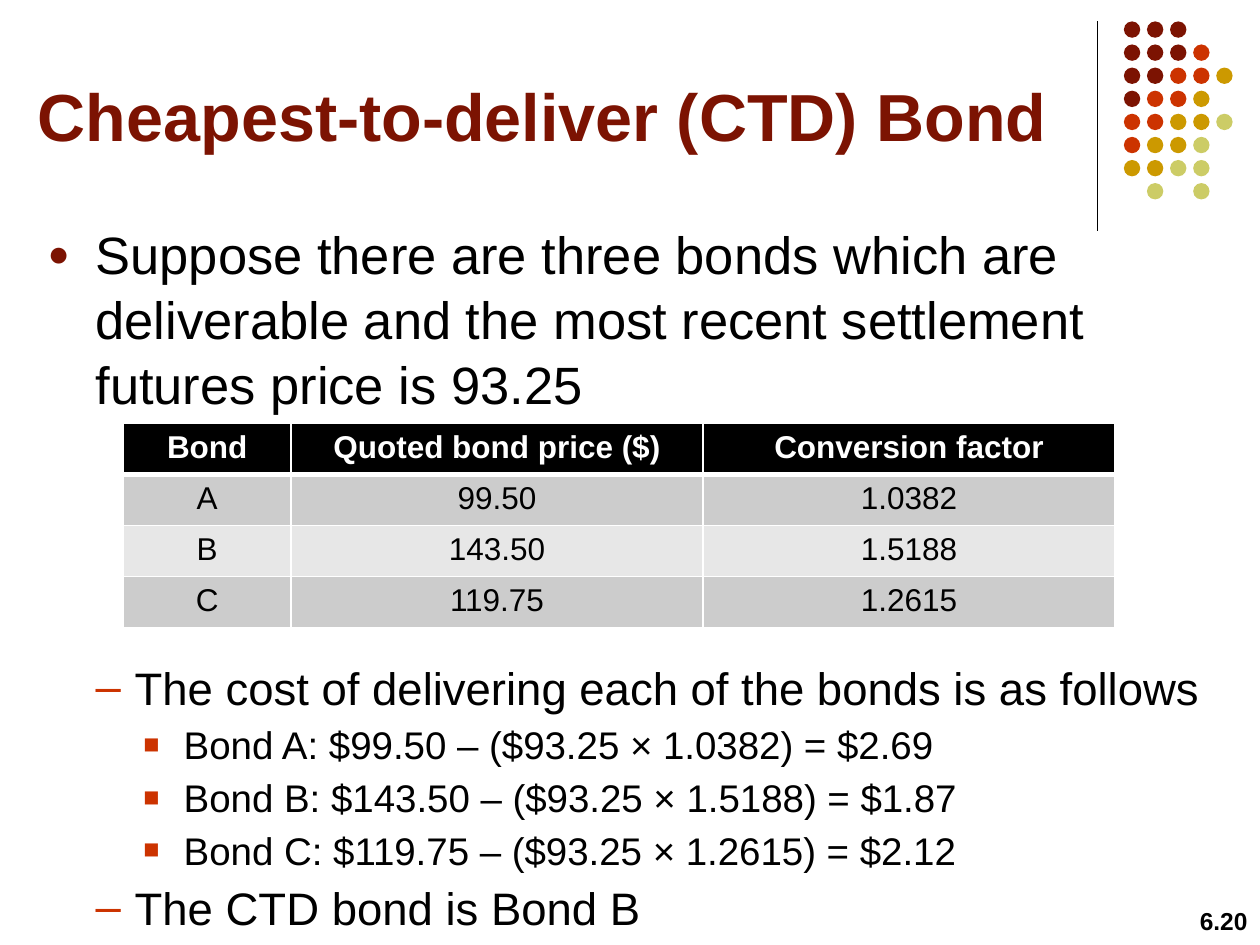
from dataclasses import dataclass

from lxml import etree
from pptx import Presentation
from pptx.dml.color import RGBColor
from pptx.enum.shapes import MSO_CONNECTOR, MSO_SHAPE
from pptx.enum.text import MSO_ANCHOR, MSO_AUTO_SIZE, PP_ALIGN
from pptx.oxml.ns import qn
from pptx.util import Inches, Pt

STRAIGHT = MSO_CONNECTOR.STRAIGHT
OVAL = MSO_SHAPE.OVAL
MIDDLE = MSO_ANCHOR.MIDDLE
NO_FIT = MSO_AUTO_SIZE.NONE
LEFT, CENTER, RIGHT = PP_ALIGN.LEFT, PP_ALIGN.CENTER, PP_ALIGN.RIGHT

BLACK = RGBColor(0x00, 0x00, 0x00)
WHITE = RGBColor(0xFF, 0xFF, 0xFF)
MAROON = RGBColor(0x7C, 0x13, 0x02)
RED = RGBColor(0xCC, 0x33, 0x00)
GOLD = RGBColor(0xCC, 0x99, 0x00)
OLIVE = RGBColor(0xCC, 0xCC, 0x66)
DARK_BAND = RGBColor(0xCC, 0xCC, 0xCC)
LIGHT_BAND = RGBColor(0xE7, 0xE7, 0xE7)

FONT = "Arial"
WIDTH, HEIGHT = 10, 7.5
DOT_LEFT, DOT_TOP, DOT_SIZE, DOT_PITCH = 8.92, 0.17, 0.13, 0.55 / 3
DOT_COLORS = {"m": MAROON, "r": RED, "g": GOLD, "o": OLIVE}
DOT_ROWS = ["mmm", "mmmr", "mmrrg", "mrrg", "rrggo", "rggo", "ggoo", " o o"]

TABLE_LEFT, TABLE_TOP, ROW_HEIGHT = 0.98, 3.36, 0.405
COLUMN_WIDTHS = [1.33, 3.27, 3.27]
BOND_ROWS = [
    ("Bond", "Quoted bond price ($)", "Conversion factor"),
    ("A", "99.50", "1.0382"),
    ("B", "143.50", "1.5188"),
    ("C", "119.75", "1.2615"),
]


@dataclass(frozen=True)
class Level:
    size: int
    indent: float
    hang: float
    bullet: str
    color: RGBColor
    bullet_share: int


@dataclass(frozen=True)
class Point:
    level: Level
    text: str
    before: float = 3


MAIN = Level(30, 0.38, 0.38, "●", MAROON, 70)
DASH = Level(26, 0.69, 0.31, "–", RED, 100)
SQUARE = Level(22, 1.08, 0.32, "■", RED, 70)

POINTS = [
    Point(MAIN, "Suppose there are three bonds which are deliverable and the "
                "most recent settlement futures price is 93.25", 0),
    Point(DASH, "The cost of delivering each of the bonds is as follows", 139),
    Point(SQUARE, "Bond A: $99.50 – ($93.25 × 1.0382) = $2.69"),
    Point(SQUARE, "Bond B: $143.50 – ($93.25 × 1.5188) = $1.87"),
    Point(SQUARE, "Bond C: $119.75 – ($93.25 × 1.2615) = $2.12"),
    Point(DASH, "The CTD bond is Bond B"),
]


def write(para, text: str, *, size: float, color: RGBColor = BLACK,
          bold: bool = False, align=LEFT) -> None:
    para.alignment = align
    span = para.add_run()
    span.text = text
    span.font.name = FONT
    span.font.size = Pt(size)
    span.font.bold = bold
    span.font.color.rgb = color


def place(box, left: float, top: float, width: float, height: float) -> None:
    box.left, box.top = Inches(left), Inches(top)
    box.width, box.height = Inches(width), Inches(height)


def add_bullet(para, level: Level) -> None:
    props = para._p.get_or_add_pPr()
    props.set("marL", str(Inches(level.indent)))
    props.set("indent", str(-Inches(level.hang)))
    color = etree.SubElement(props, qn("a:buClr"))
    etree.SubElement(color, qn("a:srgbClr"), val=str(level.color))
    etree.SubElement(props, qn("a:buSzPct"), val=str(level.bullet_share * 1000))
    etree.SubElement(props, qn("a:buFont"), typeface=FONT)
    etree.SubElement(props, qn("a:buChar"), char=level.bullet)


def add_title(page) -> None:
    title = page.shapes.title
    place(title, 0.2, 0.29, 8.5, 1.25)
    frame = title.text_frame
    frame.word_wrap = True
    frame.auto_size = NO_FIT
    frame.vertical_anchor = MIDDLE
    write(frame.paragraphs[0], "Cheapest-to-deliver (CTD) Bond",
          size=38, color=MAROON, bold=True)


def add_decoration(page) -> None:
    rule = page.shapes.add_connector(
        STRAIGHT, Inches(8.71), Inches(0.17), Inches(8.71), Inches(1.83))
    rule.line.color.rgb = BLACK
    rule.line.width = Pt(0.75)
    etree.SubElement(rule._element.spPr, qn("a:effectLst"))
    for row, codes in enumerate(DOT_ROWS):
        for column, code in enumerate(codes):
            if code in DOT_COLORS:
                dot = page.shapes.add_shape(
                    OVAL, Inches(DOT_LEFT + column * DOT_PITCH),
                    Inches(DOT_TOP + row * DOT_PITCH),
                    Inches(DOT_SIZE), Inches(DOT_SIZE))
                dot.shadow.inherit = False
                dot.fill.solid()
                dot.fill.fore_color.rgb = DOT_COLORS[code]
                dot.line.fill.background()


def add_points(page, points: list[Point]) -> None:
    box = page.shapes.add_textbox(0, 0, 0, 0)
    place(box, 0.28, 1.7, 9.45, 5.8)
    frame = box.text_frame
    frame.word_wrap = True
    for index, point in enumerate(points):
        para = frame.add_paragraph() if index else frame.paragraphs[0]
        para.line_spacing = 1.03
        para.space_before = Pt(point.before)
        add_bullet(para, point.level)
        write(para, point.text, size=point.level.size)


def add_borders(cell, bottom: float) -> None:
    props = cell._tc.get_or_add_tcPr()
    widths = {"a:lnL": 1, "a:lnR": 1, "a:lnT": 1, "a:lnB": bottom}
    for position, (tag, width) in enumerate(widths.items()):
        line = etree.Element(qn(tag), w=str(Pt(width)))
        fill = etree.SubElement(line, qn("a:solidFill"))
        etree.SubElement(fill, qn("a:srgbClr"), val=str(WHITE))
        props.insert(position, line)


def add_bond_table(page) -> None:
    table = page.shapes.add_table(
        len(BOND_ROWS), len(COLUMN_WIDTHS), Inches(TABLE_LEFT), Inches(TABLE_TOP),
        Inches(sum(COLUMN_WIDTHS)), Inches(ROW_HEIGHT * len(BOND_ROWS))).table
    for column, width in zip(table.columns, COLUMN_WIDTHS):
        column.width = Inches(width)
    for row, texts in enumerate(BOND_ROWS):
        header = row == 0
        band = BLACK if header else DARK_BAND if row % 2 else LIGHT_BAND
        for column, text in enumerate(texts):
            cell = table.cell(row, column)
            cell.fill.solid()
            cell.fill.fore_color.rgb = band
            add_borders(cell, 3 if header else 1)
            write(cell.text_frame.paragraphs[0], text, size=18, bold=header,
                  color=WHITE if header else BLACK, align=CENTER)


def add_page_number(page) -> None:
    box = page.shapes.add_textbox(0, 0, 0, 0)
    place(box, 9.33, 7.14, 0.67, 0.36)
    box.text_frame.word_wrap = True
    write(box.text_frame.paragraphs[0], "6.20", size=14, bold=True, align=RIGHT)


def main() -> None:
    deck = Presentation()
    deck.slide_width, deck.slide_height = Inches(WIDTH), Inches(HEIGHT)
    page = deck.slides.add_slide(deck.slide_layouts.get_by_name("Title Only"))
    add_decoration(page)
    add_title(page)
    add_points(page, POINTS)
    add_page_number(page)
    add_bond_table(page)
    deck.save("out.pptx")


if __name__ == "__main__":
    main()
